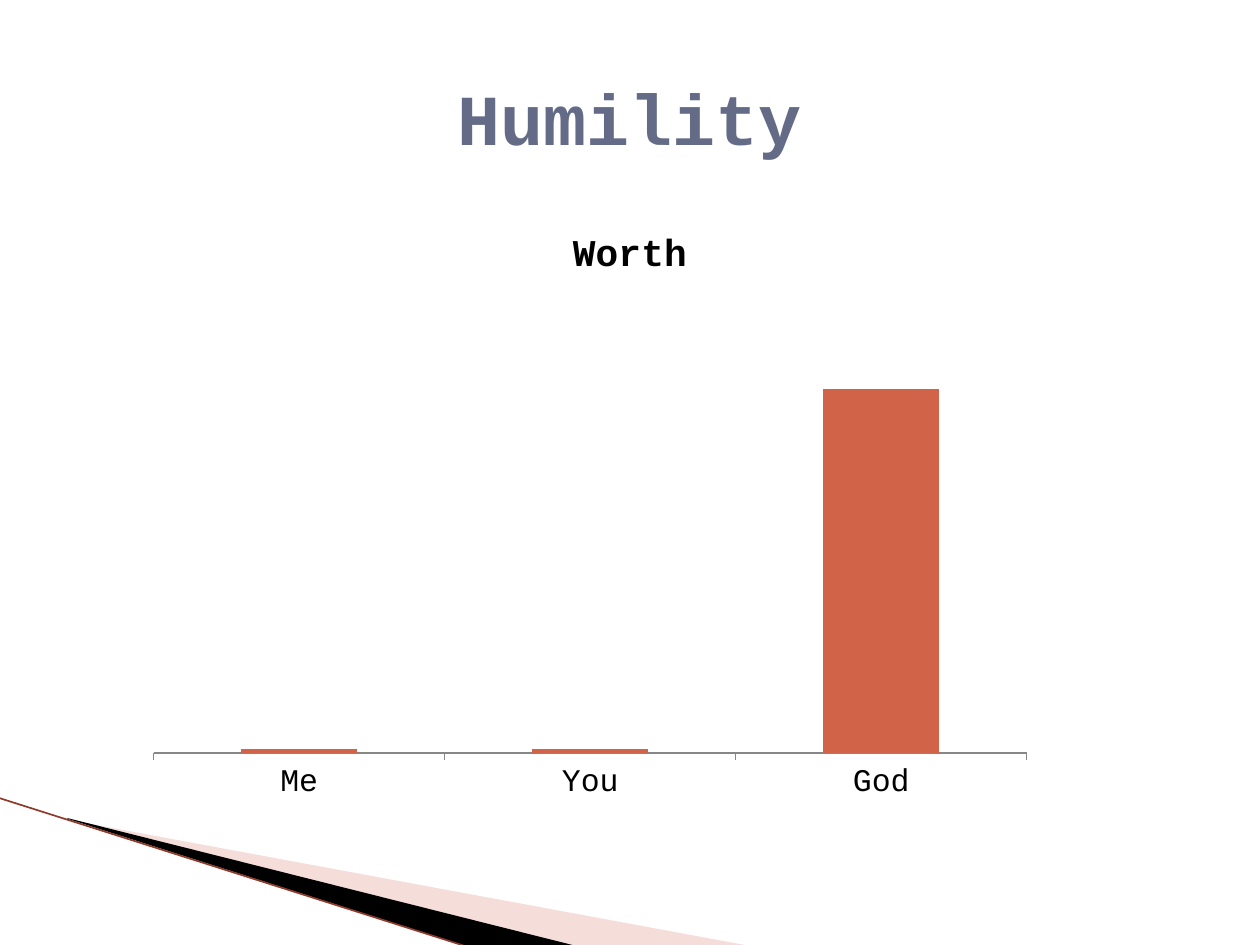
from lxml import etree
from pptx import Presentation
from pptx import util as u
from pptx.chart.data import CategoryChartData
from pptx.dml.color import RGBColor
from pptx.enum import chart as ch, shapes, text
from pptx.oxml import ns

SCALE = 914400 / 126
FONT = "Courier New"
BLACK = RGBColor(0x00, 0x00, 0x00)
SLATE = RGBColor(0x64, 0x6B, 0x86)
RUST = RGBColor(0xD1, 0x63, 0x49)
PINK = RGBColor(0xE7, 0xAC, 0xA4)
BRICK = RGBColor(0x8F, 0x3A, 0x2A)
GREY = RGBColor(0x87, 0x87, 0x87)


def px(n):
    return u.Emu(round(n * SCALE))


def style(font, size, color, bold=False):
    font.name = FONT
    font.size = u.Pt(size)
    font.bold = bold
    font.color.rgb = color


def wedge(slide, x, y, points, color, alpha=100):
    spots = [(x + a, y + b) for a, b in points]
    pen = slide.shapes.build_freeform(*spots[0], scale=SCALE)
    pen.add_line_segments(spots[1:], close=True)
    shape = pen.convert_to_shape()
    shape.shadow.inherit = False
    shape.fill.solid()
    shape.fill.fore_color.rgb = color
    shape.line.fill.background()
    if alpha < 100:
        tint = shape.fill._xPr.find(".//" + ns.qn("a:srgbClr"))
        etree.SubElement(tint, ns.qn("a:alpha"), val=str(alpha * 1000))


def swoosh(slide, x, y, w, h):
    wedge(slide, x, y, [(70, 22), (w, h), (576, h), (70, 21)], PINK, 40)
    wedge(slide, x, y, [(68, 20), (577, h), (470, h + 1), (69, 21)], BLACK)
    edge = slide.shapes.add_connector(
        shapes.MSO_CONNECTOR.STRAIGHT, px(x), px(y), px(x + 469), px(y + h + 1))
    edge.line.color.rgb = BRICK
    edge.line.width = u.Pt(0.95)
    etree.SubElement(edge._element.spPr, ns.qn("a:effectLst"))


def title(slide, x, y, w, h):
    box = slide.shapes.add_textbox(px(x), px(y), px(w), px(h))
    frame = box.text_frame
    frame.word_wrap = True
    frame.vertical_anchor = text.MSO_ANCHOR.MIDDLE
    frame.text = "Humility"
    para = frame.paragraphs[0]
    para.alignment = text.PP_ALIGN.CENTER
    style(para.runs[0].font, 41, SLATE, True)


def place(chart, x, y, w, h):
    area = chart._chartSpace.chart.plotArea
    for old in area.findall(ns.qn("c:layout")):
        area.remove(old)
    layout = etree.Element(ns.qn("c:layout"))
    area.insert(0, layout)
    manual = etree.SubElement(layout, ns.qn("c:manualLayout"))
    rules = [("layoutTarget", "inner"), ("xMode", "edge"), ("yMode", "edge"),
             ("x", x), ("y", y), ("w", w), ("h", h)]
    for name, value in rules:
        etree.SubElement(manual, ns.qn("c:" + name), val=str(value))


def worth(slide, x, y, w, h):
    data = CategoryChartData()
    data.categories = ["Me", "You", "God"]
    data.add_series("Worth", [1, 1, 100])
    chart = slide.shapes.add_chart(
        ch.XL_CHART_TYPE.COLUMN_CLUSTERED, px(x), px(y), px(w), px(h), data).chart
    style(chart.font, 18, BLACK)
    chart.has_legend = False
    chart.has_title = True
    head = chart.chart_title
    head.include_in_layout = False
    head.text_frame.text = "Worth"
    style(head.text_frame.paragraphs[0].runs[0].font, 21.6, BLACK, True)

    cat = chart.category_axis
    cat.major_tick_mark = ch.XL_TICK_MARK.OUTSIDE
    cat.format.line.color.rgb = GREY
    val = chart.value_axis
    val.minimum_scale = 0
    val.maximum_scale = 120
    val.has_major_gridlines = False
    val.visible = False

    plot = chart.plots[0]
    plot.gap_width = 150
    plot.vary_by_categories = False
    fill = plot.series[0].format.fill
    fill.solid()
    fill.fore_color.rgb = RUST
    place(chart, 0.08, 0.18, 0.77, 0.7)


def main():
    deck = Presentation()
    deck.slide_width = px(1260)
    deck.slide_height = px(945)
    slide = deck.slides.add_slide(deck.slide_layouts[6])
    swoosh(slide, -1, 798, 751, 148)
    title(slide, 63, 38, 1134, 158)
    worth(slide, 63, 204, 1134, 624)
    deck.save("out.pptx")


if __name__ == "__main__":
    main()
